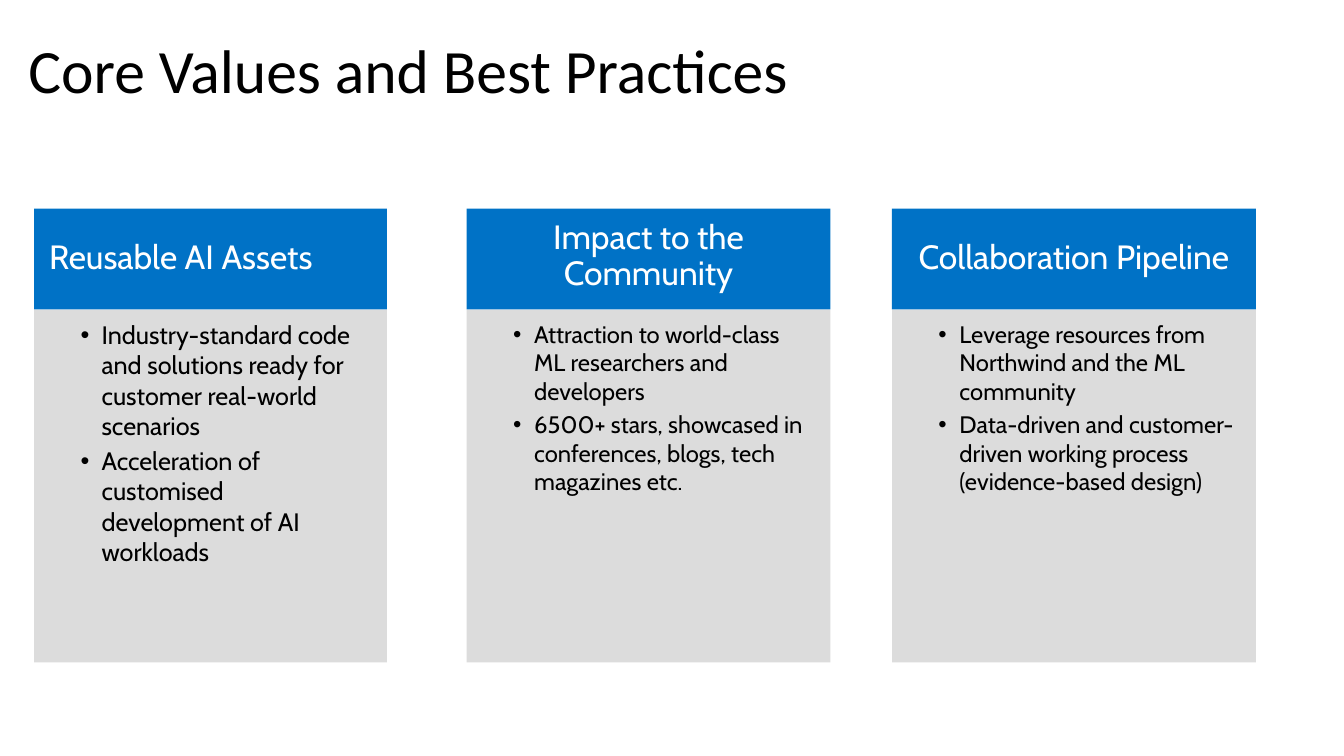
from lxml.etree import SubElement
from pptx import Presentation
from pptx.dml.color import RGBColor
from pptx.enum.shapes import MSO_SHAPE
from pptx.enum.text import MSO_ANCHOR, MSO_AUTO_SIZE, PP_ALIGN
from pptx.oxml.ns import qn
from pptx.util import Cm, Pt

COLORS = {"text": "000000", "header": "0072C6", "panel": "DCDCDC", "white": "FFFFFF"}
HEADER_TOP, HEADER_HEIGHT, LIST_HEIGHT = 5.26, 2.54, 8.89

# Heading, alignment, line spacing, left, width, list size, list items
COLUMNS = [
    ("Reusable AI Assets", PP_ALIGN.LEFT, 1.0, 0.86, 8.89, 18, [
        "Industry-standard code and solutions ready for customer real-world scenarios",
        "Acceleration of customised development of AI workloads"]),
    ("Impact to the Community", PP_ALIGN.CENTER, 0.9, 11.76, 9.17, 17, [
        "Attraction to world-class ML researchers and developers",
        "6500+ stars, showcased in conferences, blogs, tech magazines etc."]),
    ("Collaboration Pipeline", PP_ALIGN.CENTER, 1.0, 22.48, 9.17, 17, [
        "Leverage resources from Northwind and the ML community",
        "Data-driven and customer-driven working process (evidence-based design)"]),
]


class SlideBuilder:
    """Holds the text style and the current slide."""

    font_name = "Cabin"

    def __init__(self, slide):
        self.slide = slide

    def color(self, name):
        return RGBColor.from_string(COLORS[name])

    def place(self, shape, left, top, width, height):
        shape.left, shape.top = Cm(left), Cm(top)
        shape.width, shape.height = Cm(width), Cm(height)

    def style_font(self, paragraph, size, color, name=None):
        font = paragraph.font
        font.name = name or self.font_name
        font.size = Pt(size)
        font.bold = False
        font.color.rgb = self.color(color)

    def style_box(self, shape, fill, anchor):
        shape.fill.solid()
        shape.fill.fore_color.rgb = self.color(fill)
        shape.line.fill.background()
        frame = shape.text_frame
        frame.word_wrap = True
        frame.auto_size = MSO_AUTO_SIZE.NONE
        frame.vertical_anchor = anchor
        frame.margin_left = frame.margin_right = frame.margin_bottom = Cm(0.38)
        frame.margin_top = Cm(0.25)

    def title(self, text):
        shape = self.slide.shapes.title
        self.place(shape, 0.46, 0.38, 32.99, 2.97)
        frame = shape.text_frame
        frame.text = text
        frame.auto_size = MSO_AUTO_SIZE.NONE
        frame.vertical_anchor = MSO_ANCHOR.MIDDLE
        paragraph = frame.paragraphs[0]
        paragraph.alignment = PP_ALIGN.LEFT
        paragraph.line_spacing = 0.9
        self.style_font(paragraph, 44, "text", "Calibri")

    def header(self, text, alignment, line_spacing, left, width):
        shape = self.slide.shapes.add_shape(
            MSO_SHAPE.RECTANGLE, Cm(left), Cm(HEADER_TOP), Cm(width), Cm(HEADER_HEIGHT))
        shape.shadow.inherit = False
        self.style_box(shape, "header", MSO_ANCHOR.MIDDLE)
        shape.text_frame.text = text
        paragraph = shape.text_frame.paragraphs[0]
        paragraph.alignment = alignment
        paragraph.line_spacing = line_spacing
        self.style_font(paragraph, 24, "white")

    def bullet_list(self, placeholder, items, left, width, size):
        self.place(placeholder, left, HEADER_TOP + HEADER_HEIGHT, width, LIST_HEIGHT)
        self.style_box(placeholder, "panel", MSO_ANCHOR.TOP)
        frame = placeholder.text_frame
        frame.text = "\n".join(items)
        for paragraph in frame.paragraphs:
            paragraph.level = 1
            paragraph.alignment = PP_ALIGN.LEFT
            paragraph.space_before = Pt(0.2 * size)
            self.add_bullet(paragraph)
            self.style_font(paragraph, size, "text")

    def add_bullet(self, paragraph):
        properties = paragraph._p.get_or_add_pPr()
        properties.set("marL", str(Cm(1.32)))
        properties.set("indent", str(-Cm(0.53)))
        SubElement(properties, qn("a:buFont"), typeface="Arial")
        SubElement(properties, qn("a:buChar"), char="•")


def main():
    presentation = Presentation()
    presentation.slide_width, presentation.slide_height = Cm(33.87), Cm(19.05)
    # The comparison layout offers a title and four body placeholders
    slide = presentation.slides.add_slide(presentation.slide_layouts[4])
    builder = SlideBuilder(slide)
    builder.title("Core Values and Best Practices")

    # Three columns: a header above a list
    bodies = list(slide.placeholders)[1:]
    for body, column in zip(bodies, COLUMNS):
        heading, alignment, line_spacing, left, width, size, items = column
        builder.header(heading, alignment, line_spacing, left, width)
        builder.bullet_list(body, items, left, width, size)

    # Remove the body placeholder that no column uses
    for body in bodies[len(COLUMNS):]:
        body.element.getparent().remove(body.element)

    presentation.save("out.pptx")


if __name__ == "__main__":
    main()
